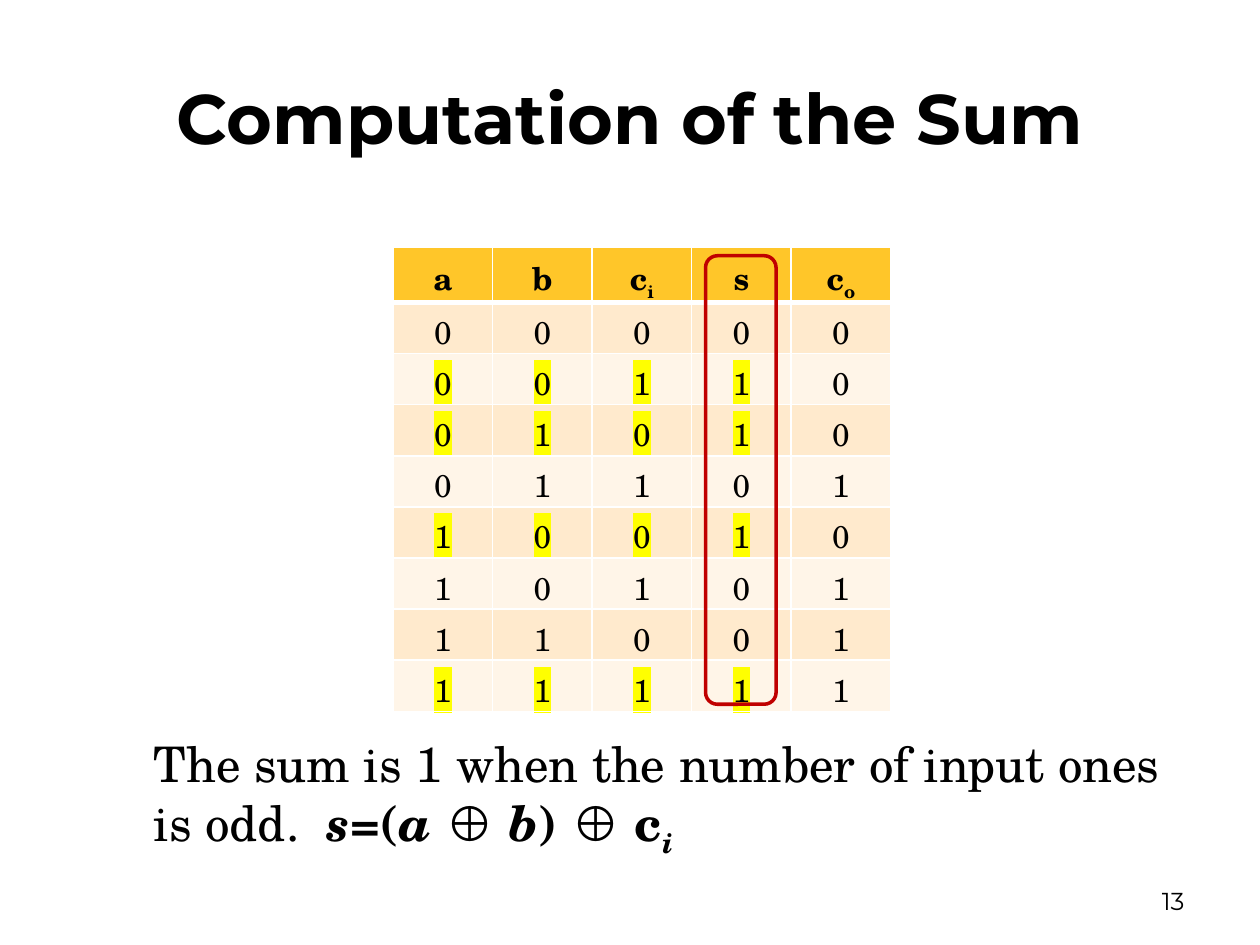
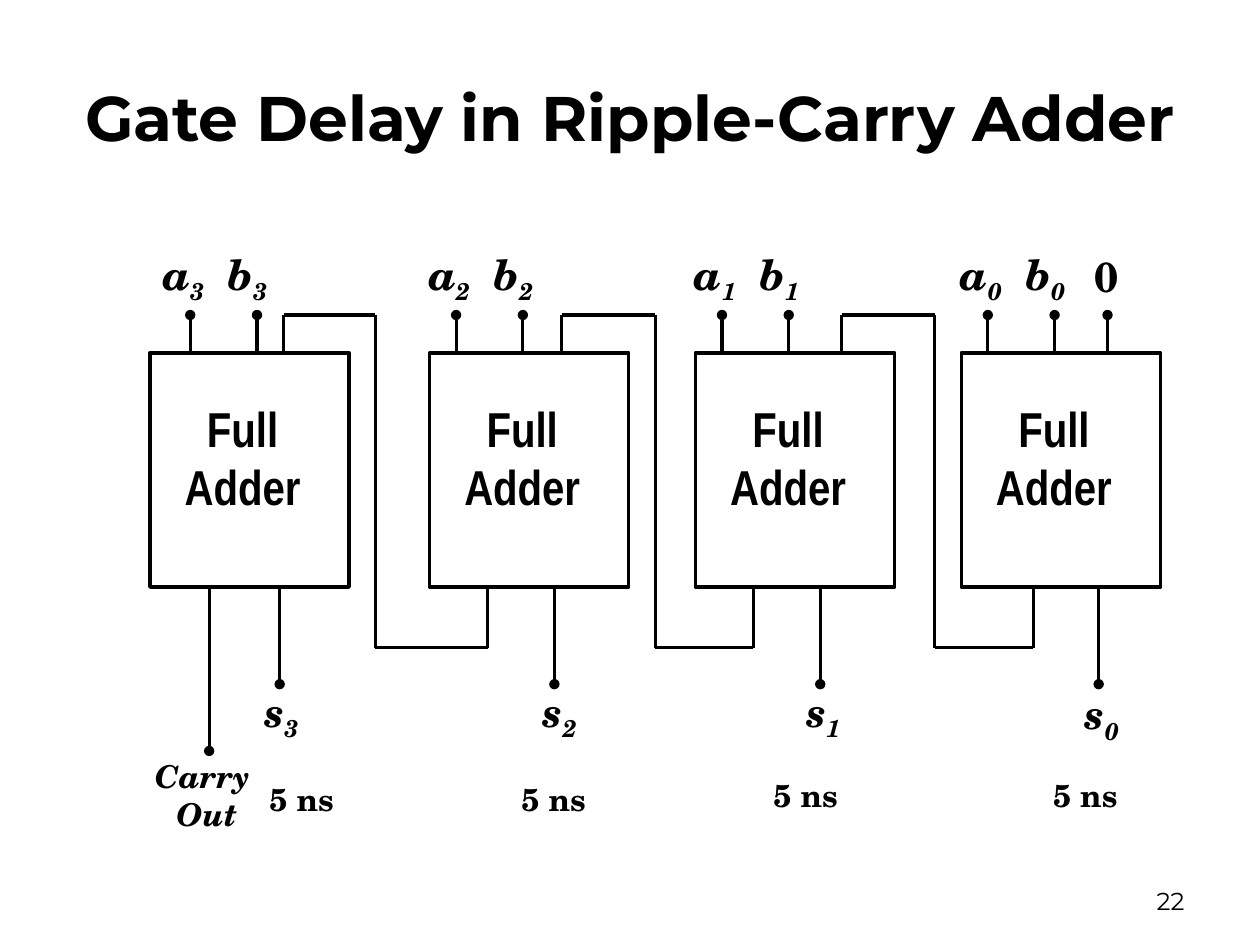
import itertools

import lxml.etree
import pptx
import pptx.dml.color
import pptx.enum.shapes
import pptx.enum.text
import pptx.oxml.ns
import pptx.util

Inches = pptx.util.Inches
Pt = pptx.util.Pt
RGBColor = pptx.dml.color.RGBColor
PP_ALIGN = pptx.enum.text.PP_ALIGN
MSO_ANCHOR = pptx.enum.text.MSO_ANCHOR
MSO_SHAPE = pptx.enum.shapes.MSO_SHAPE
STRAIGHT = pptx.enum.shapes.MSO_CONNECTOR.STRAIGHT
qn = pptx.oxml.ns.qn

BLACK = RGBColor(0x00, 0x00, 0x00)
WHITE = RGBColor(0xFF, 0xFF, 0xFF)
YELLOW = RGBColor(0xFF, 0xFF, 0x00)
RED = RGBColor(0xC0, 0x00, 0x00)
HEADER_GOLD = RGBColor(0xFF, 0xC6, 0x29)
BANDS = [RGBColor(0xFF, 0xF5, 0xE8), RGBColor(0xFF, 0xEA, 0xCD)]
SANS = "Montserrat"
SERIF = "TeX Gyre Schola"
NARROW = "Arial Narrow"


def write(frame, parts, size, font=SERIF, align=PP_ALIGN.LEFT, tab=None):
    frame.word_wrap = True
    para = frame.paragraphs[0]
    para.alignment = align
    if tab:
        tabs = lxml.etree.SubElement(para._p.get_or_add_pPr(), qn("a:tabLst"))
        lxml.etree.SubElement(tabs, qn("a:tab"), pos=str(Inches(tab)), algn="l")
    for text, style in parts:
        if text == "\n":
            para.add_line_break()
            continue
        span = para.add_run()
        span.text = text
        span.font.size = Pt(size)
        span.font.bold = "b" in style
        span.font.italic = "i" in style
        span.font.color.rgb = BLACK
        if "h" in style:
            mark = lxml.etree.SubElement(span.font._element, qn("a:highlight"))
            lxml.etree.SubElement(mark, qn("a:srgbClr"), val=str(YELLOW))
        if "_" in style:
            span.font._element.set("baseline", "-25000")
        span.font.name = font


def wire(page, start, end, dot=False):
    line = page.shapes.add_connector(STRAIGHT, *map(Inches, start + end))
    line.line.color.rgb = BLACK
    line.line.width = Pt(1.75)
    if dot:
        lxml.etree.SubElement(line.line._get_or_add_ln(), qn("a:tailEnd"), type="oval")
    lxml.etree.SubElement(line._element.spPr, qn("a:effectLst"))


deck = pptx.Presentation()
deck.slide_width = Inches(10)
deck.slide_height = Inches(7.5)

pages = []
for heading, size, number in [
    ("Computation of the Sum", 40, "13"),
    ("Gate Delay in Ripple-Carry Adder", 36, "22"),
]:
    page = deck.slides.add_slide(deck.slide_layouts[5])
    title = page.shapes.title
    title.left, title.top = Inches(0.5), Inches(0.3)
    title.width, title.height = Inches(9), Inches(1.25)
    title.text_frame.auto_size = pptx.enum.text.MSO_AUTO_SIZE.NONE
    title.text_frame.vertical_anchor = MSO_ANCHOR.MIDDLE
    write(title.text_frame, [(heading, "b")], size, SANS, PP_ALIGN.CENTER)
    box = page.shapes.add_textbox(Inches(7.17), Inches(6.95), Inches(2.33), Inches(0.4))
    box.text_frame.vertical_anchor = MSO_ANCHOR.MIDDLE
    write(box.text_frame, [(number, "")], 14, SANS, PP_ALIGN.RIGHT)
    pages.append(page)

sum_page, delay_page = pages

box = sum_page.shapes.add_textbox(Inches(1.1), Inches(5.76), Inches(8.4), Inches(1.1))
frame = box.text_frame
frame.margin_left = frame.margin_right = Inches(0.12)
frame.margin_top = frame.margin_bottom = Inches(0.06)
write(frame, [
    ("The sum is 1 when the number of input ones is odd.  ", ""),
    ("s", "bi"), ("=(", "b"), ("a ", "bi"), ("⊕ ", "b"),
    ("b", "bi"), (") ⊕ c", "b"), ("i", "bi_"),
], 28)

truth_rows = [[[("a", "b")], [("b", "b")], [("c", "b"), ("i", "b_")],
               [("s", "b")], [("c", "b"), ("o", "b_")]]]
for inputs in itertools.product([0, 1], repeat=3):
    total = sum(inputs)
    mark = "h" if total % 2 else ""
    row = [[(str(bit), mark)] for bit in (*inputs, total % 2)]
    truth_rows.append(row + [[(str(total // 2), "")]])

table = sum_page.shapes.add_table(
    9, 5, Inches(3.12), Inches(1.96), Inches(3.95), Inches(3.65)).table
table.horz_banding = False
for column in table.columns:
    column.width = Inches(0.79)
for r, row in enumerate(truth_rows):
    table.rows[r].height = Inches(3.65 / 9)
    for c, parts in enumerate(row):
        cell = table.cell(r, c)
        cell.fill.solid()
        cell.fill.fore_color.rgb = BANDS[r % 2] if r else HEADER_GOLD
        write(cell.text_frame, parts, 18, align=PP_ALIGN.CENTER)
        properties = cell._tc.get_or_add_tcPr()
        for place, side in enumerate(["lnL", "lnR", "lnT", "lnB"]):
            thick = (r, side) in [(0, "lnB"), (1, "lnT")]
            border = lxml.etree.Element(qn("a:" + side), w=str(Pt(3 if thick else 1)))
            fill = lxml.etree.SubElement(border, qn("a:solidFill"))
            lxml.etree.SubElement(fill, qn("a:srgbClr"), val=str(WHITE))
            properties.insert(place, border)

outline = sum_page.shapes.add_shape(
    MSO_SHAPE.ROUNDED_RECTANGLE, Inches(5.6), Inches(2.03), Inches(0.56), Inches(3.56))
outline.shadow.inherit = False
outline.fill.background()
outline.line.color.rgb = RED
outline.line.width = Pt(2)

ADDER_TOP, ADDER_BOTTOM = 2.8, 4.65
INPUT_TOP, CARRY_LEVEL = 2.5, 5.14
labels = [
    (8.59, 1.94, 0.63, 0.5, [("0", "b")], 24, PP_ALIGN.LEFT),
    (0.92, 5.96, 1.37, 0.71, [("Carry", "bi"), ("\n", ""), (" Out", "bi")], 18,
     PP_ALIGN.CENTER),
]
stages = [
    ("3", 1.19, 2.22, (2, 5.39), (2.04, 6.14)),
    ("2", 3.41, 4.4, (4.21, 5.39), (4.04, 6.14)),
    ("1", 5.52, 6.51, (6.3, 5.39), (6.04, 6.11)),
    ("0", 7.63, 8.72, (8.51, 5.41), (8.26, 6.11)),
]
for column, (bit, left, sum_x, sum_place, delay_place) in enumerate(stages):
    adder = delay_page.shapes.add_shape(
        MSO_SHAPE.RECTANGLE, Inches(left), Inches(ADDER_TOP), Inches(1.58), Inches(1.86))
    adder.shadow.inherit = False
    adder.fill.background()
    adder.line.color.rgb = BLACK
    adder.line.width = Pt(2)
    box = delay_page.shapes.add_textbox(
        Inches(left + 0.1), Inches(3.11), Inches(1.27), Inches(1.08))
    write(box.text_frame, [("Full", "b"), ("\n", ""), ("Adder", "b")], 28, NARROW,
          PP_ALIGN.CENTER)

    input_left = 1.19 + 2.11 * column
    for offset in (0.32, 0.85):
        x = input_left + offset
        wire(delay_page, (x, ADDER_TOP), (x, INPUT_TOP), dot=True)
    box = delay_page.shapes.add_textbox(
        Inches(input_left), Inches(1.92), Inches(1.27), Inches(0.5))
    write(box.text_frame, [("a", "bi"), (bit, "bi_"), ("\tb", "bi"), (bit, "bi_")], 24,
          tab=0.52)

    wire(delay_page, (sum_x, ADDER_BOTTOM), (sum_x, 5.43), dot=True)
    labels.append((*sum_place, 0.63, 0.5, [("s", "bi"), (bit, "bi_")], 24, PP_ALIGN.LEFT))
    labels.append((*delay_place, 1.05, 0.4, [("5 ns", "b")], 18, PP_ALIGN.LEFT))

for carry_in, riser, carry_out in [(2.25, 2.98, 3.87), (4.46, 5.2, 5.98), (6.68, 7.42, 8.2)]:
    corners = [
        (carry_out, ADDER_BOTTOM), (carry_out, CARRY_LEVEL), (riser, CARRY_LEVEL),
        (riser, INPUT_TOP), (carry_in, INPUT_TOP), (carry_in, ADDER_TOP),
    ]
    for start, end in zip(corners, corners[1:]):
        wire(delay_page, start, end)

wire(delay_page, (8.79, ADDER_TOP), (8.79, INPUT_TOP), dot=True)
wire(delay_page, (1.66, ADDER_BOTTOM), (1.66, 5.96), dot=True)

for left, top, width, height, parts, size, align in labels:
    box = delay_page.shapes.add_textbox(*map(Inches, (left, top, width, height)))
    write(box.text_frame, parts, size, align=align)

deck.save("out.pptx")
